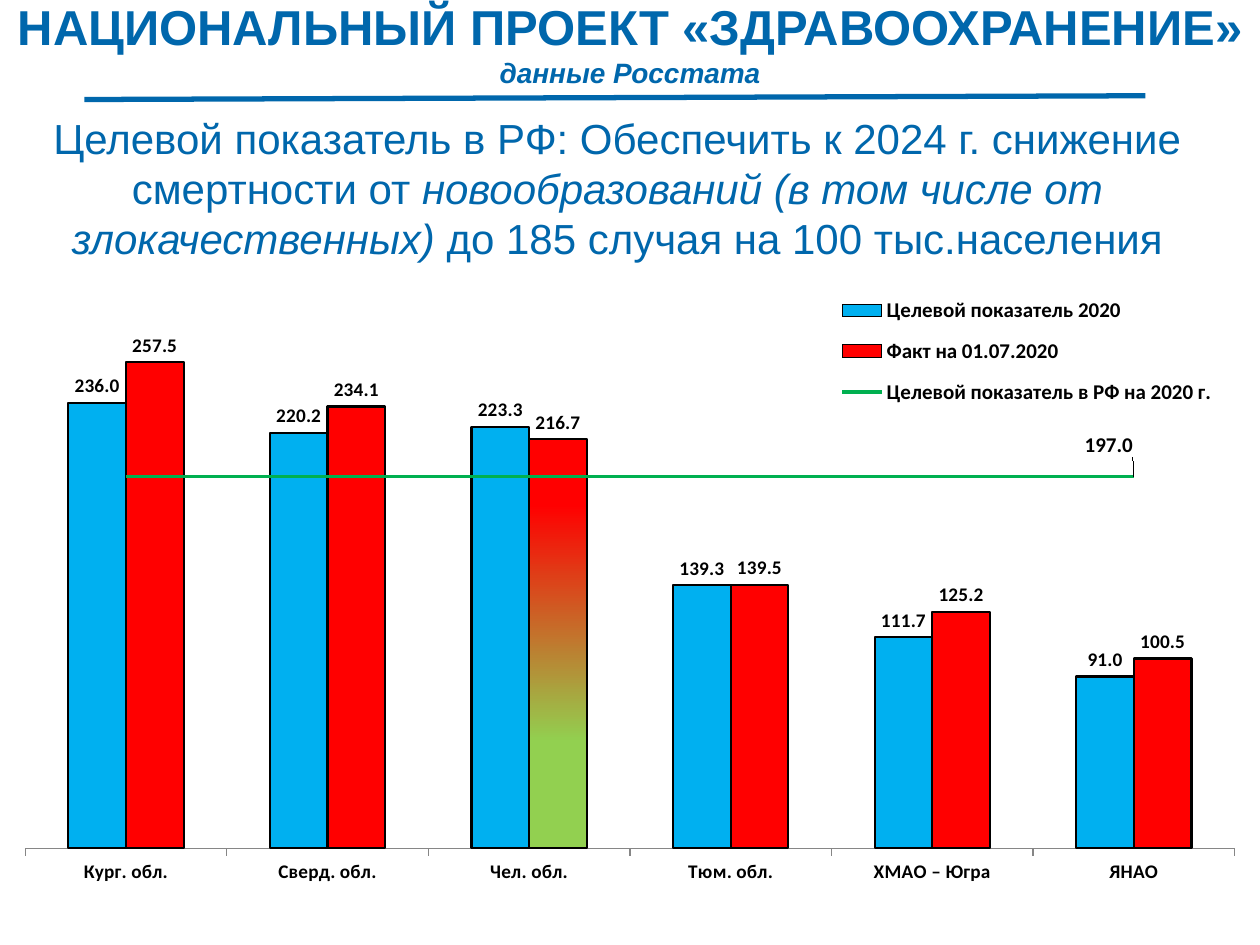
from pptx import Presentation
from pptx.chart.data import CategoryChartData
from pptx.dml.color import RGBColor
from pptx.enum.chart import XL_CHART_TYPE, XL_LABEL_POSITION, XL_LEGEND_POSITION, XL_MARKER_STYLE, XL_TICK_MARK
from pptx.enum.shapes import MSO_CONNECTOR
from pptx.enum.text import MSO_ANCHOR, MSO_AUTO_SIZE, PP_ALIGN
from pptx.oxml import parse_xml
from pptx.oxml.ns import nsdecls, qn
from pptx.util import Inches, Pt

CLUSTER = XL_CHART_TYPE.COLUMN_CLUSTERED
ABOVE, OUTER = XL_LABEL_POSITION.ABOVE, XL_LABEL_POSITION.OUTSIDE_END
RIGHT = XL_LEGEND_POSITION.RIGHT
UNMARKED = XL_MARKER_STYLE.NONE
TICK = XL_TICK_MARK.OUTSIDE
STRAIGHT = MSO_CONNECTOR.STRAIGHT
MIDDLE, CENTER = MSO_ANCHOR.MIDDLE, PP_ALIGN.CENTER
FIXED = MSO_AUTO_SIZE.NONE
BLUE, BLACK, RED, GREEN = "0067AC", "000000", "FF0000", "00B050"
FORMAT = "#,##0.0"


def color(code):
    return RGBColor.from_string(code)


def place(node, spot, modes, **sizes):
    """Give a chart part a manual layout, as child number spot."""
    for old in node.findall(qn("c:layout")):
        node.remove(old)
    rows = modes + "".join(f'<c:{key} val="{val}"/>' for key, val in sizes.items())
    node.insert(spot, parse_xml(
        f'<c:layout {nsdecls("c")}><c:manualLayout>{rows}</c:manualLayout></c:layout>'))


prs = Presentation()
prs.slide_width, prs.slide_height = Inches(10), Inches(7.5)
slide = prs.slides.add_slide(prs.slide_layouts[5])

# Title
title = slide.shapes.title
title.left, title.top, title.width, title.height = 0, 0, Inches(10), Inches(0.68)
frame = title.text_frame
frame.text = "НАЦИОНАЛЬНЫЙ ПРОЕКТ «ЗДРАВООХРАНЕНИЕ»\vданные Росстата"
frame.auto_size = FIXED
frame.vertical_anchor = MIDDLE
frame.paragraphs[0].alignment = CENTER
for run, size, slant in zip(frame.paragraphs[0].runs, (28, 16), (False, True)):
    font = run.font
    font.name, font.size, font.bold, font.italic = "Arial", Pt(size), True, slant
    font.color.rgb = color(BLUE)

rule = slide.shapes.add_connector(
    STRAIGHT, Inches(0.67), Inches(0.79), Inches(9.09), Inches(0.76))
rule.line.color.rgb = color(BLUE)
rule.line.width = Pt(3)
rule._element.spPr.append(parse_xml(f'<a:effectLst {nsdecls("a")}/>'))

# Target statement
box = slide.shapes.add_textbox(0, Inches(0.84), Inches(9.8), Inches(1.31))
box.text_frame.word_wrap = True
para = box.text_frame.paragraphs[0]
para.alignment = CENTER
for text, slant in (
    ("Целевой показатель в РФ: Обеспечить к 2024 г. снижение смертности от ", False),
    ("новообразований (в том числе от злокачественных)", True),
    (" до 185 случая на 100 тыс.населения", False),
):
    run = para.add_run()
    run.text = text
    font = run.font
    font.name, font.size, font.italic = "Arial", Pt(24), slant
    font.color.rgb = color(BLUE)

# Chart
data = CategoryChartData(number_format=FORMAT)
data.categories = ["Кург. обл.", "Сверд. обл.", "Чел. обл.", "Тюм. обл.", "ХМАО – Югра", "ЯНАО"]
data.add_series("Целевой показатель 2020", (236, 220.2, 223.3, 139.3, 111.7, 91))
data.add_series("Факт на 01.07.2020", (257.5, 234.1, 216.7, 139.5, 125.2, 100.5))
data.add_series("Целевой показатель в РФ на 2020 г.", [197] * 6)
chart = slide.shapes.add_chart(
    CLUSTER, 0, Inches(2.02), Inches(10), Inches(5.48), data).chart
chart.has_title = False
chart.font.name, chart.font.size = "Calibri", Pt(10)
chart.font.color.rgb = color(BLACK)

axis = chart.category_axis
axis.major_tick_mark = TICK
axis.format.line.color.rgb = color("868686")
axis.tick_labels.font.size, axis.tick_labels.font.bold = Pt(11), True
scale = chart.value_axis
scale.minimum_scale, scale.maximum_scale = 0, 300
scale.has_major_gridlines = False
scale.visible = False

chart.has_legend = True
legend = chart.legend
legend.position = RIGHT
legend.include_in_layout = False
legend.font.size, legend.font.bold = Pt(12), True
EDGE = '<c:xMode val="edge"/><c:yMode val="edge"/>'
place(legend._element, 1, EDGE, x=0.66, y=0.04, w=0.31, h=0.2)

# Move the national target to a line on hidden second axes
area = chart._chartSpace.chart.plotArea
place(area, 0, '<c:layoutTarget val="inner"/>' + EDGE, x=0.02, y=0.04, w=0.96, h=0.82)
bars = area.find(qn("c:barChart"))
goal = bars.findall(qn("c:ser"))[2]
for flag in goal.findall(qn("c:invertIfNegative")):
    goal.remove(flag)
curve = parse_xml(
    f'<c:lineChart {nsdecls("c")}><c:grouping val="standard"/><c:varyColors val="0"/>'
    '<c:marker val="1"/><c:axId val="501"/><c:axId val="502"/></c:lineChart>')
curve.insert(2, goal)
bars.addnext(curve)
last = area.find(qn("c:valAx"))
for kind, own, other, side, limits, cross in (
    ("valAx", 502, 501, "r", '<c:max val="300"/><c:min val="0"/>', "max"),
    ("catAx", 501, 502, "b", "", "autoZero"),
):
    last.addnext(parse_xml(
        f'<c:{kind} {nsdecls("c")}><c:axId val="{own}"/>'
        f'<c:scaling><c:orientation val="minMax"/>{limits}</c:scaling>'
        f'<c:delete val="1"/><c:axPos val="{side}"/>'
        f'<c:crossAx val="{other}"/><c:crosses val="{cross}"/></c:{kind}>'))

# Columns
plot = chart.plots[0]
plot.gap_width, plot.overlap = 150, 0
plot.vary_by_categories = False
for series, code in zip(plot.series, ("00B0F0", RED)):
    series.format.fill.solid()
    series.format.fill.fore_color.rgb = color(code)
    labels = series.data_labels
    labels.show_value = True
    labels.position = OUTER
    labels.number_format, labels.number_format_is_linked = FORMAT, False
    labels.font.size, labels.font.bold = Pt(11), True
blend = plot.series[1].points[2]
for item in (*plot.series, blend):
    item.format.line.color.rgb = color(BLACK)
    item.format.line.width = Pt(1.25)
fill = blend.format.fill
fill.gradient()
fill.gradient_angle = 270
for stop, spot, code in zip(fill.gradient_stops, (0.16, 0.74), (RED, "92D050")):
    stop.position = spot
    stop.color.rgb = color(code)

# Target line, labelled at its last point
target = chart.plots[1].series[0]
target.smooth = False
target.marker.style = UNMARKED
target.format.line.color.rgb = color(GREEN)
target.format.line.width = Pt(2.25)
target.data_labels.show_value = False
label = target.points[5].data_label
label.font.size, label.font.bold = Pt(12), True
label.position = ABOVE
place(target._element.xpath(".//c:dLbl")[0], 1, "", x=-0.02, y=-0.02)

prs.save("out.pptx")
